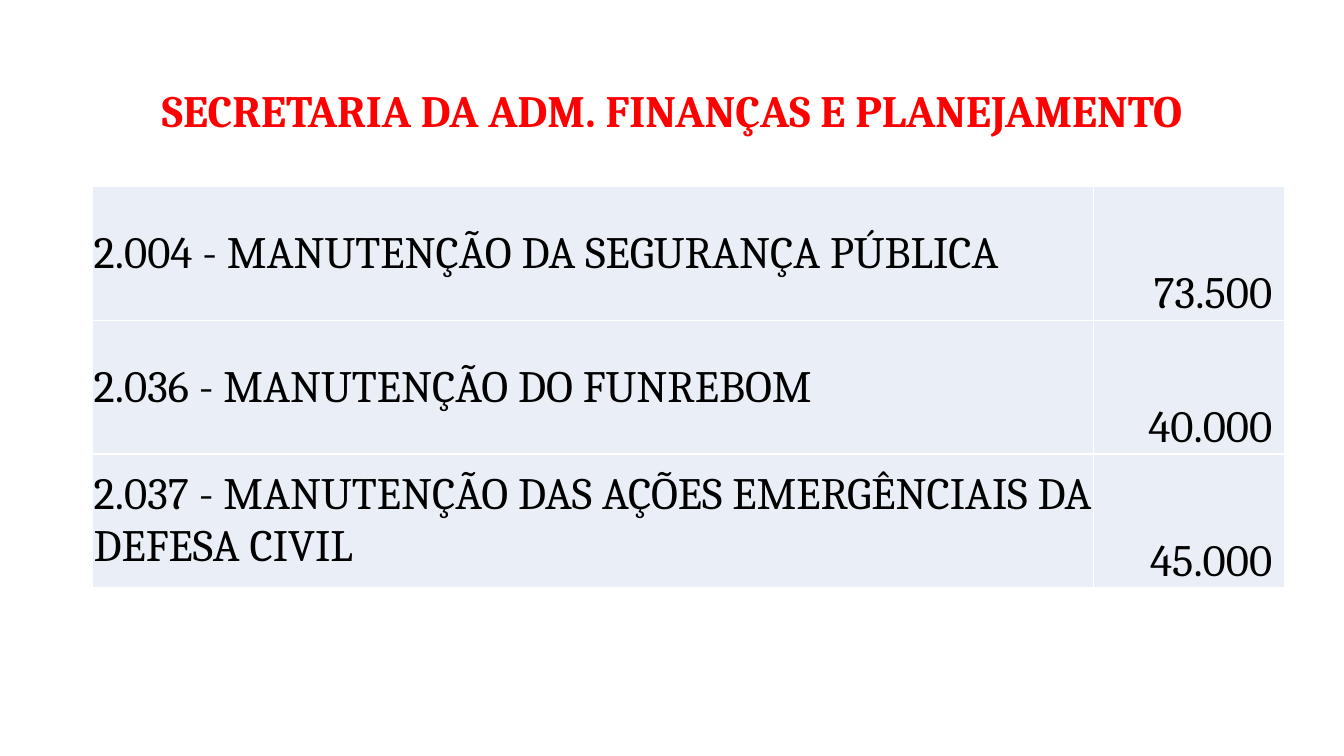
from dataclasses import dataclass
from typing import Any

import lxml.etree
import pptx
import pptx.dml.color
import pptx.enum.text
import pptx.oxml
import pptx.oxml.ns
import pptx.util

WIDE, HIGH = pptx.util.Inches(13.33), pptx.util.Inches(7.5)
FONT = {"name": "Cambria", "size": pptx.util.Pt(32)}
ALIGN = pptx.enum.text.PP_ALIGN
ANCHOR = pptx.enum.text.MSO_ANCHOR
EDGE = pptx.util.Inches(0.01)
PAD = pptx.util.Inches(0.12)


@dataclass
class Box:
    """A frame in percent of the slide's width and height."""
    left: float
    top: float
    width: float
    height: float

    def place(self) -> dict[str, int]:
        return {
            "left": round(WIDE * self.left / 100),
            "top": round(HIGH * self.top / 100),
            "width": round(WIDE * self.width / 100),
            "height": round(HIGH * self.height / 100),
        }


@dataclass
class Item:
    label: str
    value: str


@dataclass
class Column:
    share: float
    align: Any
    anchor: Any
    right: int


HEAD = Box(6.9, 5.33, 86.27, 19.33)
GRID = Box(6.9, 24.67, 88.67, 53.07)
COLUMNS = [
    Column(0.84, ALIGN.LEFT, ANCHOR.MIDDLE, EDGE),
    Column(0.16, ALIGN.RIGHT, ANCHOR.BOTTOM, PAD),
]
ITEMS = [
    Item("2.004 - MANUTENÇÃO DA SEGURANÇA PÚBLICA", "73.500"),
    Item("2.036 - MANUTENÇÃO DO FUNREBOM", "40.000"),
    Item("2.037 - MANUTENÇÃO DAS AÇÕES EMERGÊNCIAIS DA DEFESA CIVIL", "45.000"),
]


def color(code: str) -> pptx.dml.color.RGBColor:
    return pptx.dml.color.RGBColor.from_string(code)


def apply(target: Any, values: dict[str, Any]) -> None:
    for name, value in values.items():
        setattr(target, name, value)


def write(frame: Any, text: str, align: Any, code: str, bold: bool) -> None:
    line = frame.paragraphs[0]
    line.alignment = align
    run = line.add_run()
    run.text = text
    apply(run.font, FONT | {"bold": bold})
    run.font.color.rgb = color(code)


def border(cell: Any, code: str, points: float) -> None:
    props = cell._tc.get_or_add_tcPr()
    name = pptx.oxml.ns.qn
    for side in ("lnL", "lnR", "lnT", "lnB"):
        edge = lxml.etree.SubElement(props, name(f"a:{side}"), w=str(pptx.util.Pt(points)))
        fill = lxml.etree.SubElement(edge, name("a:solidFill"))
        lxml.etree.SubElement(fill, name("a:srgbClr"), val=code)


def draw_title(slide: Any) -> None:
    title = slide.shapes.title
    apply(title, HEAD.place())
    frame = title.text_frame
    apply(frame, {
        "word_wrap": True,
        "auto_size": pptx.enum.text.MSO_AUTO_SIZE.NONE,
        "vertical_anchor": ANCHOR.MIDDLE,
    })
    write(frame, "SECRETARIA DA ADM. FINANÇAS E PLANEJAMENTO", ALIGN.CENTER, "FF0000", True)
    frame.paragraphs[0].line_spacing = 0.9


def draw_cell(cell: Any, text: str, column: Column) -> None:
    apply(cell, {
        "margin_left": EDGE,
        "margin_right": column.right,
        "margin_top": EDGE,
        "margin_bottom": 0,
        "vertical_anchor": column.anchor,
    })
    border(cell, "FFFFFF", 1)
    cell.fill.solid()
    cell.fill.fore_color.rgb = color("EAEFF7")
    write(cell.text_frame, text, column.align, "000000", False)


def draw_table(slide: Any) -> None:
    place = GRID.place()
    table = slide.shapes.add_table(len(ITEMS), len(COLUMNS), **place).table
    apply(table, {"first_row": False, "horz_banding": False})
    for index, column in enumerate(COLUMNS):
        table.columns[index].width = round(place["width"] * column.share)
    for row, item in enumerate(ITEMS):
        for index, text in enumerate((item.label, item.value)):
            draw_cell(table.cell(row, index), text, COLUMNS[index])


def main() -> None:
    deck = pptx.Presentation()
    apply(deck, {"slide_width": WIDE, "slide_height": HIGH})
    slide = deck.slides.add_slide(deck.slide_layouts.get_by_name("Title Only"))
    draw_title(slide)
    draw_table(slide)
    deck.save("out.pptx")


if __name__ == "__main__":
    main()
